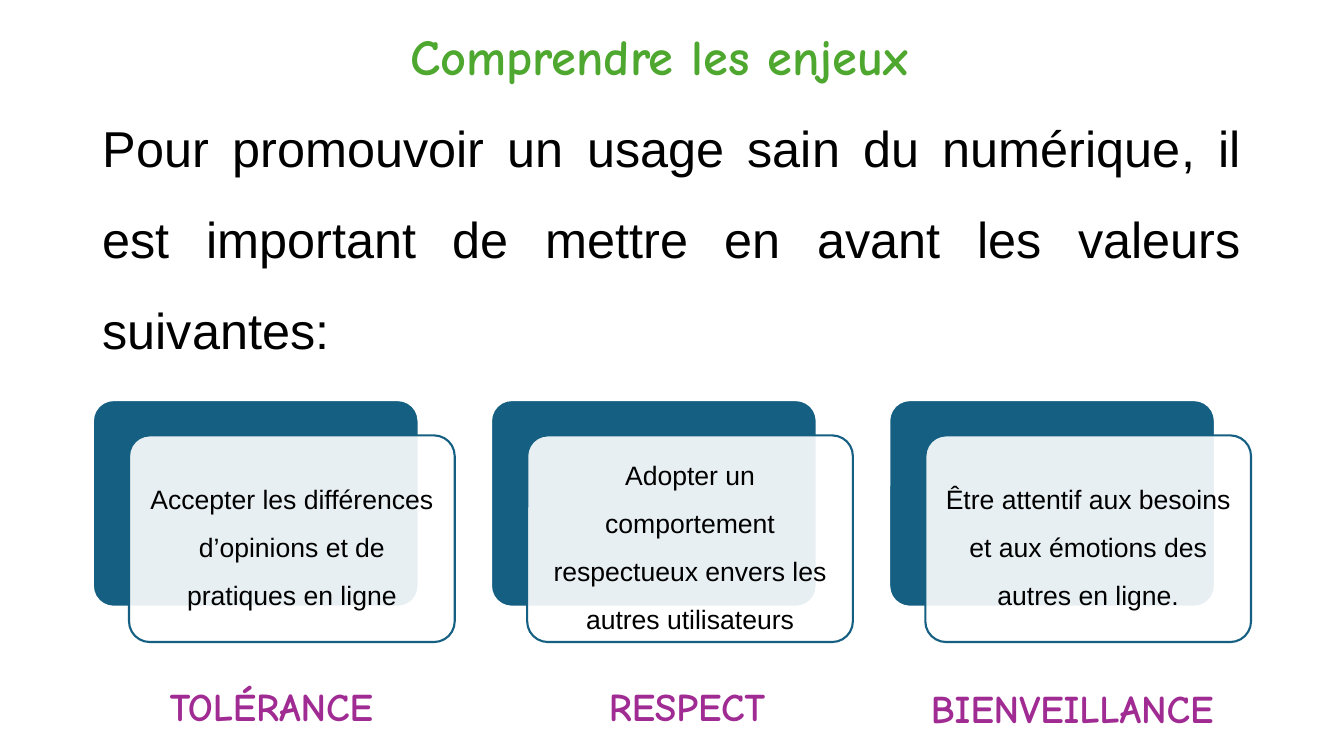
from lxml import etree
from pptx import Presentation
from pptx.dml.color import RGBColor
from pptx.enum.shapes import MSO_SHAPE
from pptx.enum.text import MSO_ANCHOR, MSO_AUTO_SIZE, PP_ALIGN
from pptx.oxml.ns import qn
from pptx.util import Pt

ROUNDED = MSO_SHAPE.ROUNDED_RECTANGLE
LEFT, CENTER, JUSTIFY = PP_ALIGN.LEFT, PP_ALIGN.CENTER, PP_ALIGN.JUSTIFY
TOP, MIDDLE = MSO_ANCHOR.TOP, MSO_ANCHOR.MIDDLE
NO_AUTOSIZE = MSO_AUTO_SIZE.NONE

COLORS = {
    "text": "000000",
    "white": "FFFFFF",
    "blue": "156082",
    "green": "4EA72E",
    "purple": "A02B93",
}


def write_text(shape, text, size, font="Arial", color="text", bold=False,
               align=LEFT, anchor=TOP, line_spacing=1.0, margins=(7.2, 3.6)):
    frame = shape.text_frame
    frame.word_wrap = True
    frame.auto_size = NO_AUTOSIZE
    frame.vertical_anchor = anchor
    frame.margin_left = frame.margin_right = Pt(margins[0])
    frame.margin_top = frame.margin_bottom = Pt(margins[1])
    paragraph = frame.paragraphs[0]
    paragraph.alignment = align
    paragraph.line_spacing = line_spacing
    run = paragraph.add_run()
    run.text = text
    run.font.name = font
    run.font.size = Pt(size)
    run.font.bold = bold
    run.font.color.rgb = RGBColor.from_string(COLORS[color])


def add_card(slide, left, top, fill, line):
    card = slide.shapes.add_shape(ROUNDED, Pt(left), Pt(top), Pt(232.6), Pt(147.6))
    card.adjustments[0] = 0.1
    card.shadow.inherit = False
    card.fill.solid()
    card.fill.fore_color.rgb = RGBColor.from_string(COLORS[fill])
    card.line.color.rgb = RGBColor.from_string(COLORS[line])
    card.line.width = Pt(1.5)
    return card


presentation = Presentation()
presentation.slide_width = Pt(960)
presentation.slide_height = Pt(540)
slide = presentation.slides.add_slide(presentation.slide_layouts[5])

# Introductory sentence
title = slide.shapes.title
title.left, title.top, title.width, title.height = Pt(66), Pt(85), Pt(828), Pt(149)
write_text(title, "Pour promouvoir un usage sain du numérique, il est important "
           "de mettre en avant les valeurs suivantes:", 36,
           align=JUSTIFY, anchor=MIDDLE, line_spacing=1.5)

# Heading
heading = slide.shapes.add_textbox(Pt(286), Pt(14.4), Pt(410), Pt(51))
write_text(heading, "Comprendre les enjeux", 36, font="Comic Neue",
           color="green", bold=True)

# Values: name, label left, label top, description
values = [
    ("TOLÉRANCE", 66, 484,
     "Accepter les différences d’opinions et de pratiques en ligne"),
    ("RESPECT", 363, 484,
     "Adopter un comportement respectueux envers les autres utilisateurs"),
    ("BIENVEILLANCE", 638, 485.3,
     "Être attentif aux besoins et aux émotions des autres en ligne."),
]
for index, (name, label_left, label_top, description) in enumerate(values):
    card_left = 66.4 + index * 284.4

    # Back card and translucent front card
    add_card(slide, card_left, 285.8, "blue", "white")
    front = add_card(slide, card_left + 25.8, 311, "white", "blue")
    fill_color = front.fill._xPr.find(qn("a:solidFill"))[0]
    etree.SubElement(fill_color, qn("a:alpha"), val="90000")
    write_text(front, description, 19, align=CENTER, anchor=MIDDLE,
               line_spacing=1.5, margins=(5.7, 5.7))

    # Name below the cards
    label = slide.shapes.add_textbox(Pt(label_left), Pt(label_top), Pt(255.6), Pt(41))
    write_text(label, name, 28, font="Comic Neue", color="purple", bold=True,
               align=CENTER)

presentation.save("out.pptx")
